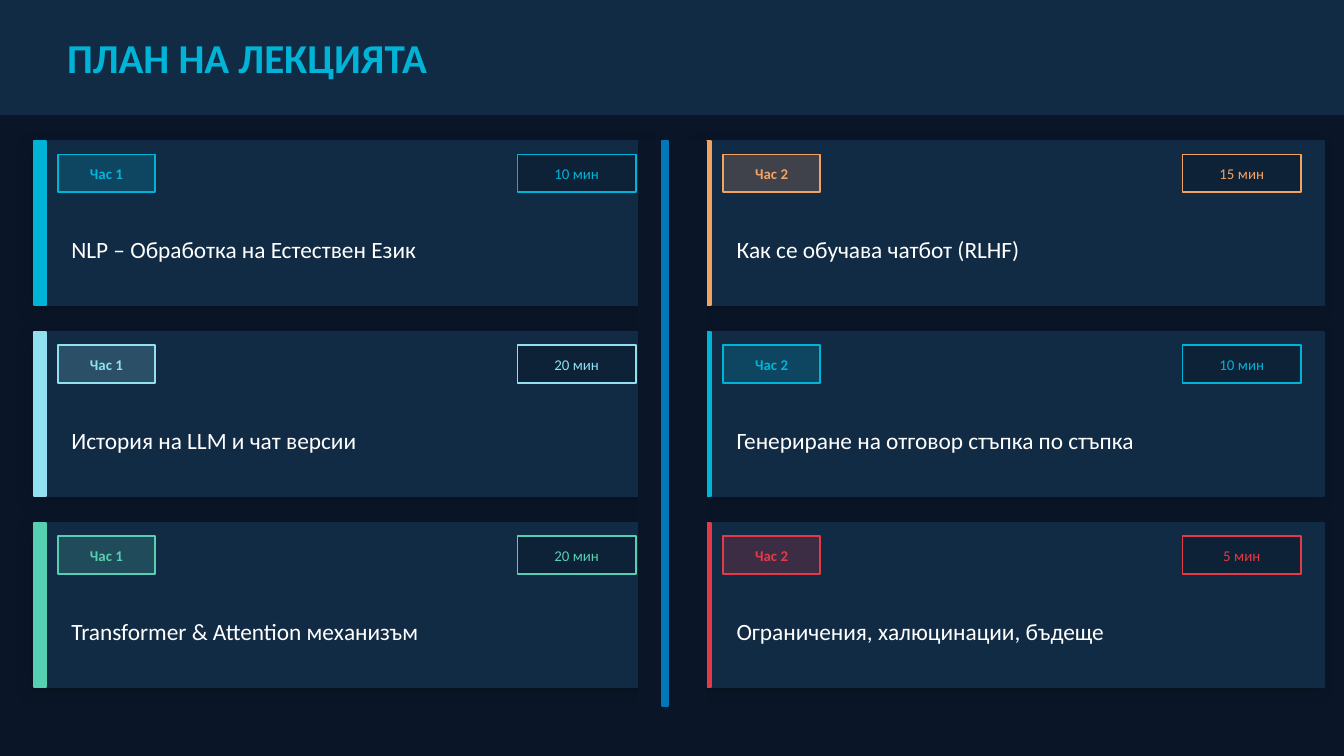
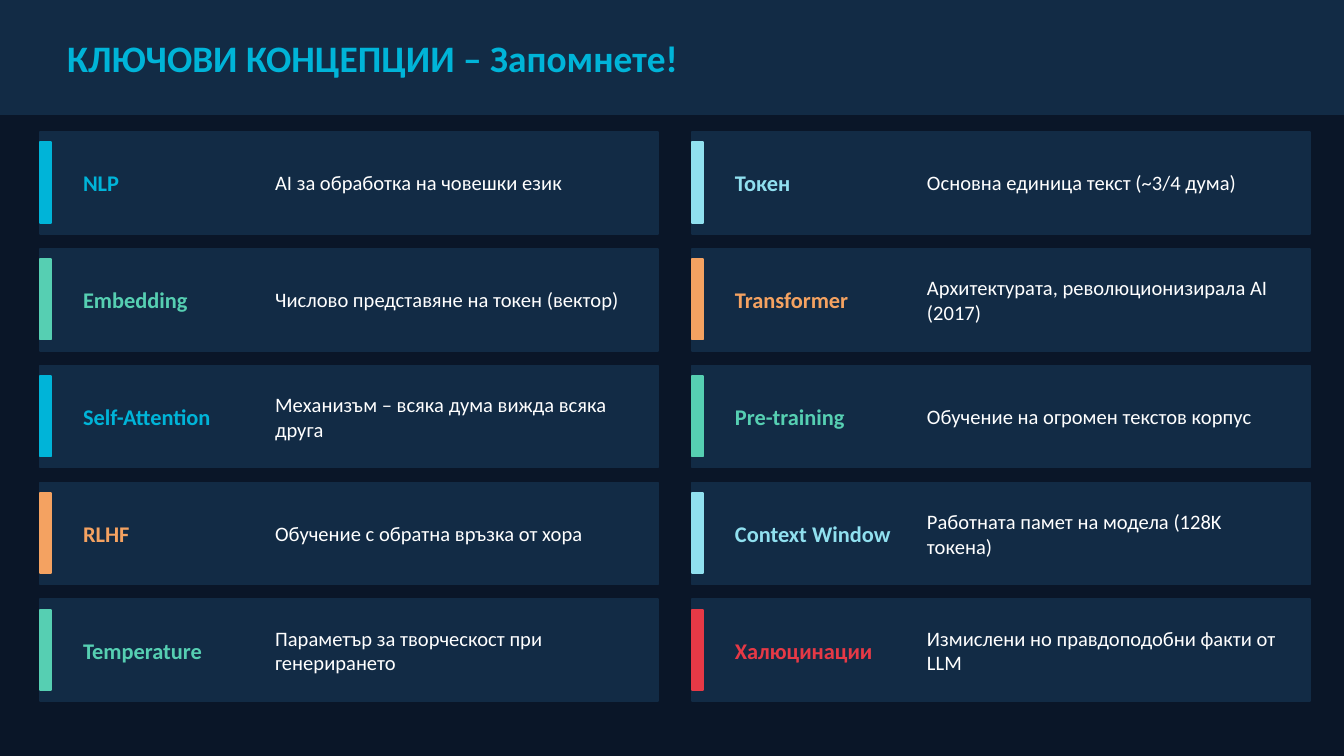
from dataclasses import dataclass
from typing import Optional

from lxml.etree import SubElement
from pptx import Presentation
from pptx.dml.color import RGBColor
from pptx.enum.shapes import MSO_SHAPE
from pptx.enum.text import MSO_ANCHOR, PP_ALIGN
from pptx.oxml.ns import qn
from pptx.presentation import Presentation as Deck
from pptx.shapes.autoshape import Shape
from pptx.slide import Slide
from pptx.util import Cm, Pt

# Shared style
FONT = "Calibri"
COLORS = {
    "night": "0A1628",
    "panel": "122B45",
    "well": "0D2137",
    "divider": "0077B6",
    "white": "FFFFFF",
    "cyan": "00B4D8",
    "ice": "90E0EF",
    "mint": "56CFB2",
    "orange": "F4A261",
    "red": "E63946",
}
PAGE_WIDTH, PAGE_HEIGHT = 25.4, 14.29
BAND_HEIGHT = 2.16


@dataclass(frozen=True)
class Area:
    """A rectangle in centimetres."""
    left: float
    top: float
    width: float
    height: float

    def inner(self, dx: float, dy: float, width: float, height: float) -> "Area":
        return Area(self.left + dx, self.top + dy, width, height)


@dataclass(frozen=True)
class Grid:
    """The first cell and the distance to the next column and row."""
    first: Area
    column_step: float
    row_step: float

    def cell(self, column: int, row: int) -> Area:
        return self.first.inner(column * self.column_step, row * self.row_step,
                                self.first.width, self.first.height)


@dataclass(frozen=True)
class Style:
    size: float
    color: str
    bold: bool = False


@dataclass(frozen=True)
class Lesson:
    hour: str
    duration: str
    topic: str
    color: str


@dataclass(frozen=True)
class Concept:
    term: str
    definition: str
    color: str


# Content: lessons by column, concepts by row
LESSONS = [
    [
        Lesson("Час 1", "10 мин", "NLP – Обработка на Естествен Език", "cyan"),
        Lesson("Час 1", "20 мин", "История на LLM и чат версии", "ice"),
        Lesson("Час 1", "20 мин", "Transformer & Attention механизъм", "mint"),
    ],
    [
        Lesson("Час 2", "15 мин", "Как се обучава чатбот (RLHF)", "orange"),
        Lesson("Час 2", "10 мин", "Генериране на отговор стъпка по стъпка", "cyan"),
        Lesson("Час 2", "5 мин", "Ограничения, халюцинации, бъдеще", "red"),
    ],
]
CONCEPTS = [
    Concept("NLP", "AI за обработка на човешки език", "cyan"),
    Concept("Токен", "Основна единица текст (~3/4 дума)", "ice"),
    Concept("Embedding", "Числово представяне на токен (вектор)", "mint"),
    Concept("Transformer", "Архитектурата, революционизирала AI (2017)", "orange"),
    Concept("Self-Attention", "Механизъм – всяка дума вижда всяка друга", "cyan"),
    Concept("Pre-training", "Обучение на огромен текстов корпус", "mint"),
    Concept("RLHF", "Обучение с обратна връзка от хора", "orange"),
    Concept("Context Window", "Работната памет на модела (128K токена)", "ice"),
    Concept("Temperature", "Параметър за творческост при генерирането", "mint"),
    Concept("Халюцинации", "Измислени но правдоподобни факти от LLM", "red"),
]
LESSON_GRID = Grid(Area(0.64, 2.67, 11.81, 3.1), 12.57, 3.61)
CONCEPT_GRID = Grid(Area(0.76, 2.49, 11.68, 1.93), 12.32, 2.21)


# Drawing helpers
def rgb(name: str) -> RGBColor:
    return RGBColor.from_string(COLORS[name])


def add_rect(page: Slide, area: Area, fill: str, line: Optional[str] = None) -> Shape:
    rect = page.shapes.add_shape(MSO_SHAPE.RECTANGLE, Cm(area.left), Cm(area.top),
                                 Cm(area.width), Cm(area.height))
    rect.fill.solid()
    rect.fill.fore_color.rgb = rgb(fill)
    rect.line.color.rgb = rgb(line or fill)
    rect.line.width = Pt(1)
    rect.shadow.inherit = False
    return rect


def write(shape: Shape, text: str, style: Style) -> None:
    frame = shape.text_frame
    frame.word_wrap = True
    frame.vertical_anchor = MSO_ANCHOR.MIDDLE
    para = frame.paragraphs[0]
    para.text = text
    para.font.name = FONT
    para.font.size = Pt(style.size)
    para.font.bold = style.bold
    para.font.color.rgb = rgb(style.color)


def add_text(page: Slide, area: Area, text: str, style: Style) -> None:
    box = page.shapes.add_textbox(Cm(area.left), Cm(area.top),
                                  Cm(area.width), Cm(area.height))
    write(box, text, style)


def add_badge(page: Slide, area: Area, text: str, style: Style, fill: str) -> Shape:
    badge = add_rect(page, area, fill, style.color)
    write(badge, text, style)
    frame = badge.text_frame
    frame.margin_left = frame.margin_right = frame.margin_top = frame.margin_bottom = 0
    frame.paragraphs[0].alignment = PP_ALIGN.CENTER
    return badge


def set_opacity(shape: Shape, percent: int) -> None:
    color = shape.fill._xPr.find(qn("a:solidFill"))[0]
    SubElement(color, qn("a:alpha"), val=str(percent * 1000))


def add_soft_shadow(shape: Shape) -> None:
    effects = shape._element.spPr.find(qn("a:effectLst"))
    shadow = SubElement(effects, qn("a:outerShdw"), blurRad=str(Pt(8)),
                        dist=str(Pt(3)), dir=str(135 * 60000), rotWithShape="0")
    color = SubElement(shadow, qn("a:srgbClr"), val="000000")
    SubElement(color, qn("a:alpha"), val="20000")


def add_page(deck: Deck, title: str, size: float) -> Slide:
    page = deck.slides.add_slide(deck.slide_layouts[6])
    page.background.fill.solid()
    page.background.fill.fore_color.rgb = rgb("night")
    add_rect(page, Area(0, 0, PAGE_WIDTH, BAND_HEIGHT), "panel")
    add_text(page, Area(1.02, 0, 23.37, BAND_HEIGHT), title, Style(size, "cyan", True))
    return page


# Cards
def add_lesson(page: Slide, card: Area, lesson: Lesson) -> None:
    add_soft_shadow(add_rect(page, card, "panel"))
    add_rect(page, card.inner(0, 0, 0.23, card.height), lesson.color)
    hour = add_badge(page, card.inner(0.46, 0.25, 1.83, 0.71), lesson.hour,
                     Style(8, lesson.color, True), lesson.color)
    set_opacity(hour, 20)
    add_badge(page, card.inner(9.14, 0.25, 2.24, 0.71), lesson.duration,
              Style(8, lesson.color), "well")
    add_text(page, card.inner(0.46, 1.22, 10.92, 1.65), lesson.topic,
             Style(12.5, "white"))


def add_concept(page: Slide, card: Area, concept: Concept) -> None:
    add_rect(page, card, "panel")
    add_rect(page, card.inner(0, 0.2, 0.2, 1.52), concept.color)
    add_text(page, card.inner(0.56, 0, 3.56, card.height), concept.term,
             Style(12, concept.color, True))
    add_text(page, card.inner(4.19, 0, 7.32, card.height), concept.definition,
             Style(11, "white"))


# Slides
def add_plan(deck: Deck) -> None:
    page = add_page(deck, "ПЛАН НА ЛЕКЦИЯТА", 22)
    for column, lessons in enumerate(LESSONS):
        for row, lesson in enumerate(lessons):
            add_lesson(page, LESSON_GRID.cell(column, row), lesson)
    # The gutter overlaps the card edges, with the divider on top
    gutter = Area(12.07, 2.67, 1.27, 10.67)
    add_rect(page, gutter, "night")
    add_rect(page, gutter.inner(0.45, 0, 0.1, gutter.height), "divider")


def add_key_concepts(deck: Deck) -> None:
    page = add_page(deck, "КЛЮЧОВИ КОНЦЕПЦИИ – Запомнете!", 20)
    for index, concept in enumerate(CONCEPTS):
        row, column = divmod(index, 2)
        add_concept(page, CONCEPT_GRID.cell(column, row), concept)


def main() -> None:
    deck = Presentation()
    deck.slide_width, deck.slide_height = Cm(PAGE_WIDTH), Cm(PAGE_HEIGHT)
    add_plan(deck)
    add_key_concepts(deck)
    deck.save("out.pptx")


if __name__ == "__main__":
    main()
